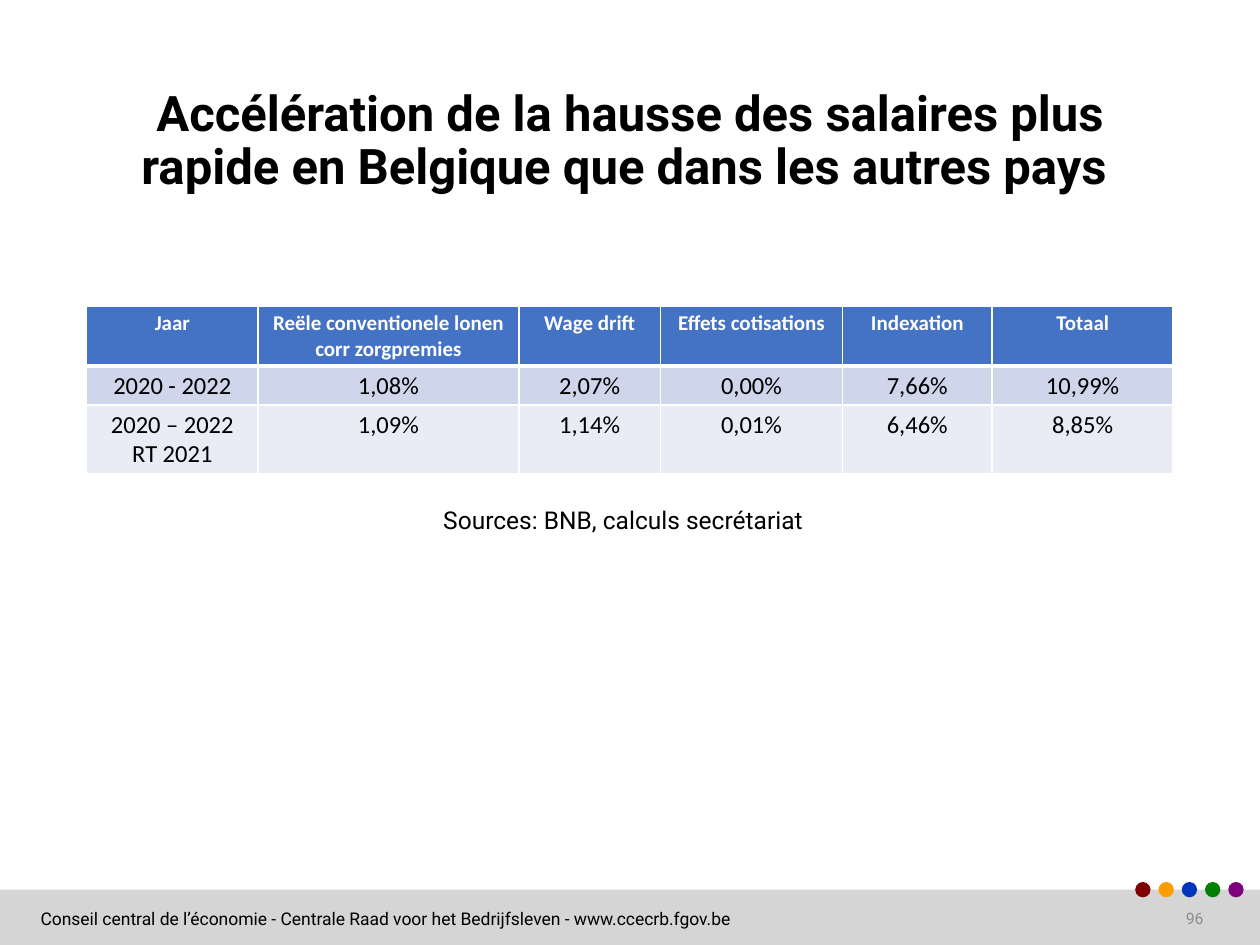
from pptx import Presentation
from pptx.util import Pt
from pptx.dml.color import RGBColor
from pptx.enum.shapes import MSO_SHAPE
from pptx.enum.text import PP_ALIGN, MSO_ANCHOR, MSO_AUTO_SIZE
from pptx.oxml import parse_xml
from pptx.oxml.ns import nsdecls

TITLE = "Accélération de la hausse des salaires plus rapide en Belgique que dans les autres pays "
SOURCE = "Sources: BNB, calculs secrétariat"
FOOTER = "Conseil central de l’économie - Centrale Raad voor het Bedrijfsleven - www.ccecrb.fgov.be"
NUMBER = "96"
ROWS = [
    ["Jaar", "Reële conventionele lonen corr zorgpremies", "Wage drift",
     "Effets cotisations", "Indexation", "Totaal"],
    ["2020 - 2022", "1,08%", "2,07%", "0,00%", "7,66%", "10,99%"],
    ["2020 – 2022 RT 2021", "1,09%", "1,14%", "0,01%", "6,46%", "8,85%"],
]
WIDTHS = [98, 149, 81, 104, 85.5, 103.5]
HEIGHTS = [33.6, 21.6, 38.4]

THEME = {
    "font": "Roboto", "grid": "Calibri",
    "title": 28, "body": 14, "head": 12, "foot": 10, "number": 9,
    "ink": "000000", "paper": "FFFFFF", "mute": "8C8C8C", "bar": "D6D5D5",
    "fills": ["4472C4", "CFD5EA", "E9EBF5"],
    "dots": ["7F0000", "FF9D00", "0035BC", "007F00", "7F007F"],
}


def color(key):
    return RGBColor.from_string(THEME.get(key, key))


def style(para, size, ink="ink", font="font", bold=False, align=None):
    para.alignment = align
    for run in para.runs:
        run.font.name = THEME[font]
        run.font.size = Pt(THEME[size])
        run.font.bold = bold
        run.font.color.rgb = color(ink)


def draw(slide, kind, box, fill):
    shape = slide.shapes.add_shape(kind, *map(Pt, box))
    shape.shadow.inherit = False
    shape.fill.solid()
    shape.fill.fore_color.rgb = color(fill)
    shape.line.fill.background()


def label(slide, text, box, size, wrap=True, inset=None, **looks):
    frame = slide.shapes.add_textbox(*map(Pt, box)).text_frame
    frame.word_wrap = wrap
    frame.vertical_anchor = MSO_ANCHOR.MIDDLE
    if inset is not None:
        frame.margin_left = frame.margin_right = Pt(inset)
        frame.margin_top = frame.margin_bottom = Pt(inset)
    frame.text = text
    style(frame.paragraphs[0], size, **looks)
    return frame


def edge(cell, row):
    props = cell._tc.get_or_add_tcPr()
    sizes = {"L": 1, "R": 1, "T": 3 if row == 1 else 1, "B": 3 if row == 0 else 1}
    for side, size in sizes.items():
        props.append(parse_xml(
            f'<a:ln{side} {nsdecls("a")} w="{Pt(size)}"><a:solidFill>'
            f'<a:srgbClr val="{THEME["paper"]}"/></a:solidFill></a:ln{side}>'))


def grid(slide):
    table = slide.shapes.add_table(len(ROWS), len(WIDTHS), Pt(49.5), Pt(175),
                                   Pt(sum(WIDTHS)), Pt(sum(HEIGHTS))).table
    for col, width in zip(table.columns, WIDTHS):
        col.width = Pt(width)
    for i, texts in enumerate(ROWS):
        table.rows[i].height = Pt(HEIGHTS[i])
        head = i == 0
        for j, text in enumerate(texts):
            cell = table.cell(i, j)
            edge(cell, i)
            cell.margin_left = cell.margin_right = Pt(5.4)
            cell.margin_top = cell.margin_bottom = Pt(2.7)
            cell.fill.solid()
            cell.fill.fore_color.rgb = color(THEME["fills"][i])
            cell.text_frame.text = text
            style(cell.text_frame.paragraphs[0], "head" if head else "body",
                  "paper" if head else "ink", "grid", head, PP_ALIGN.CENTER)


def heading(slide):
    title = slide.shapes.title
    title.left, title.top, title.width, title.height = map(Pt, (49.5, 28.8, 621, 104.4))
    frame = title.text_frame
    frame.text = TITLE
    frame.word_wrap = True
    frame.auto_size = MSO_AUTO_SIZE.NONE
    frame.vertical_anchor = MSO_ANCHOR.MIDDLE
    para = frame.paragraphs[0]
    para.line_spacing = 0.9
    para.space_after = Pt(8)
    style(para, "title", bold=True, align=PP_ALIGN.CENTER)


def main():
    deck = Presentation()
    deck.slide_width, deck.slide_height = Pt(720), Pt(540)
    slide = deck.slides.add_slide(deck.slide_layouts[5])
    draw(slide, MSO_SHAPE.RECTANGLE, (0, 508.4, 720, 31.6), "bar")
    for i, fill in enumerate(THEME["dots"]):
        draw(slide, MSO_SHAPE.OVAL, (648.7 + 13.3 * i, 504, 8.8, 8.8), fill)
    label(slide, FOOTER, (19.2, 515, 412.6, 20), "foot", wrap=False, inset=4)
    grid(slide)
    heading(slide)
    label(slide, NUMBER, (611.3, 514.2, 83.5, 20.9), "number",
          ink="mute", align=PP_ALIGN.RIGHT)
    note = label(slide, SOURCE, (246.2, 283.7, 226.8, 28.8), "body")
    note.paragraphs[0].line_spacing = 0.9
    deck.save("out.pptx")


if __name__ == "__main__":
    main()
